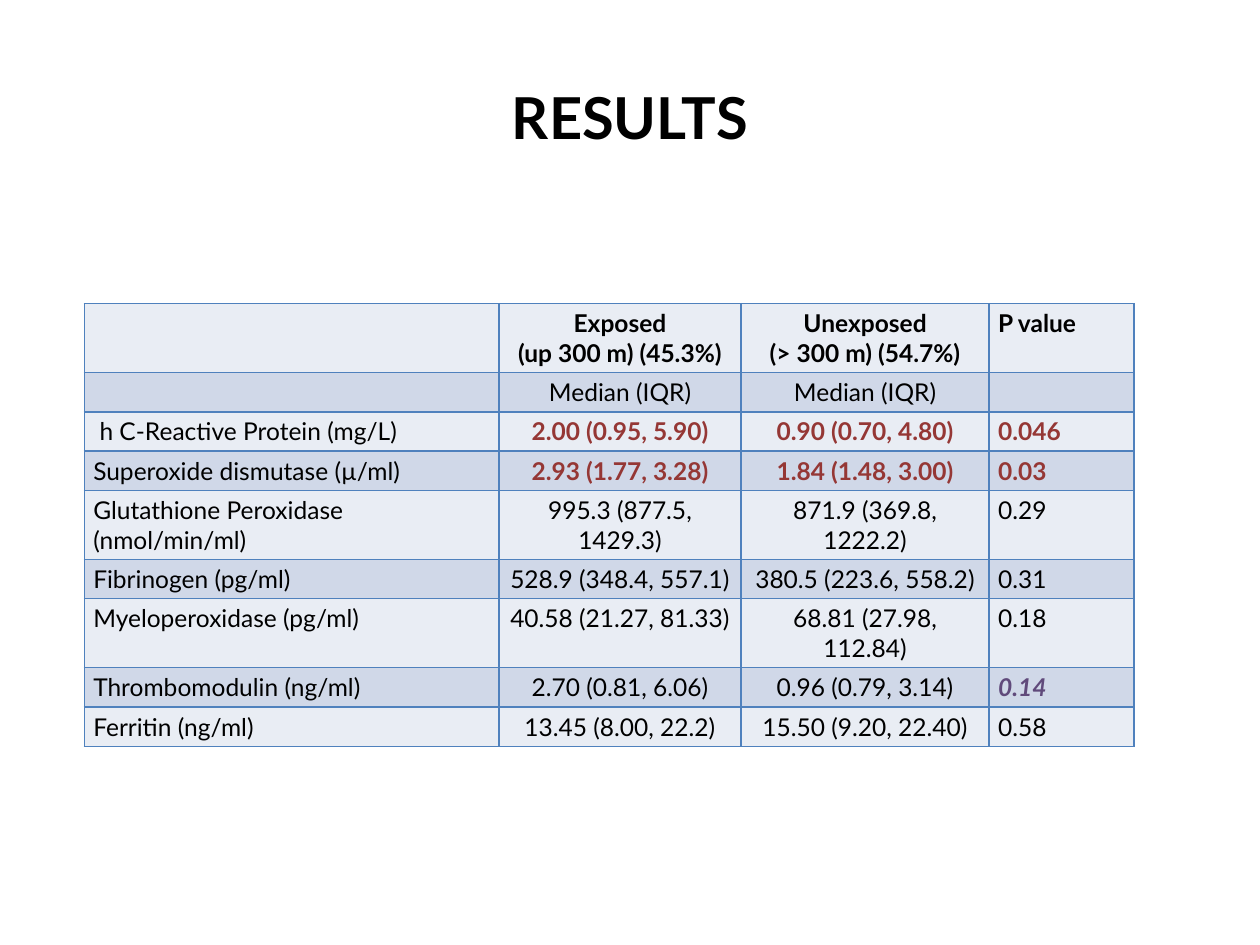
import lxml.etree
import pptx
import pptx.dml.color
import pptx.enum.text
import pptx.oxml.ns
import pptx.util
from dataclasses import dataclass

Cm, Pt = pptx.util.Cm, pptx.util.Pt
Align = pptx.enum.text.PP_ALIGN
Anchor = pptx.enum.text.MSO_ANCHOR
qn = pptx.oxml.ns.qn


@dataclass(frozen=True)
class Theme:
    font: str = "Lato"
    ink: str = "000000"
    red: str = "953735"
    plum: str = "604A7B"
    edge: str = "4F81BD"
    bands: tuple = ("E9EDF4", "D0D8E8")
    head: int = 33
    body: int = 14
    rule: int = 1


def rgb(code):
    return pptx.dml.color.RGBColor.from_string(code)


class Deck:
    def __init__(self, theme):
        self.theme = theme
        self.show = pptx.Presentation()
        self.show.slide_width, self.show.slide_height = Cm(25.4), Cm(19.05)
        self.slide = self.show.slides.add_slide(self.show.slide_layouts[6])

    def label(self, frame, text, size, align, color, bold=False, italic=False):
        frame.text = text
        for para in frame.paragraphs:
            para.alignment = align
            for run in para.runs:
                font = run.font
                font.name, font.size = self.theme.font, Pt(size)
                font.bold, font.italic = bold, italic
                font.color.rgb = rgb(color)
            if not para.runs:  # keeps the row of an empty cell low
                end = lxml.etree.SubElement(para._p, qn("a:endParaRPr"))
                end.set("sz", str(size * 100))

    def title(self, text, left, top, width, height):
        box = self.slide.shapes.add_textbox(Cm(left), Cm(top), Cm(width), Cm(height))
        frame = box.text_frame
        frame.word_wrap = True
        frame.vertical_anchor = Anchor.MIDDLE
        self.label(frame, text, self.theme.head, Align.CENTER, self.theme.ink, True)

    def border(self, cell):
        props = cell._tc.get_or_add_tcPr()
        for side in ("a:lnL", "a:lnR", "a:lnT", "a:lnB"):
            line = lxml.etree.SubElement(props, qn(side))
            line.set("w", str(Pt(self.theme.rule)))
            fill = lxml.etree.SubElement(line, qn("a:solidFill"))
            lxml.etree.SubElement(fill, qn("a:srgbClr")).set("val", self.theme.edge)

    def table(self, rows, looks, left, top, widths, heights):
        grid = self.slide.shapes.add_table(
            len(rows), len(widths), Cm(left), Cm(top),
            Cm(sum(widths)), Cm(sum(heights))).table
        grid.first_row = grid.horz_banding = False
        for col, width in zip(grid.columns, widths):
            col.width = Cm(width)
        for r, texts in enumerate(rows):
            grid.rows[r].height = Cm(heights[r])
            for c, text in enumerate(texts):
                cell = grid.cell(r, c)
                cell.margin_left = cell.margin_right = Cm(0.18)
                cell.margin_top = cell.margin_bottom = Cm(0.1)
                self.border(cell)
                cell.fill.solid()
                cell.fill.fore_color.rgb = rgb(self.theme.bands[r % 2])
                align = Align.CENTER if c in (1, 2) else Align.LEFT
                look = looks.get((r, c), (self.theme.ink,))
                self.label(cell.text_frame, text, self.theme.body, align, *look)


def main():
    theme = Theme()
    deck = Deck(theme)

    # Heading
    deck.title("RESULTS", 1.27, 0.76, 22.86, 3.18)

    # Biomarkers by exposure
    rows = [
        ("", "Exposed\n(up 300 m) (45.3%)", "Unexposed\n(> 300 m) (54.7%)", "P value"),
        ("", "Median (IQR)", "Median (IQR)", ""),
        (" h C-Reactive Protein (mg/L)", "2.00 (0.95, 5.90)", "0.90 (0.70, 4.80)", "0.046"),
        ("Superoxide dismutase (µ/ml)", "2.93 (1.77, 3.28)", "1.84 (1.48, 3.00)", "0.03"),
        ("Glutathione Peroxidase (nmol/min/ml)", "995.3 (877.5, 1429.3)",
         "871.9 (369.8, 1222.2)", "0.29"),
        ("Fibrinogen (pg/ml)", "528.9 (348.4, 557.1)", "380.5 (223.6, 558.2)", "0.31"),
        ("Myeloperoxidase (pg/ml)", "40.58 (21.27, 81.33)", "68.81 (27.98, 112.84)", "0.18"),
        ("Thrombomodulin (ng/ml)", "2.70 (0.81, 6.06)", "0.96 (0.79, 3.14)", "0.14"),
        ("Ferritin (ng/ml)", "13.45 (8.00, 22.2)", "15.50 (9.20, 22.40)", "0.58"),
    ]

    # Bold header, red significant results, plum borderline value
    looks = {(0, c): (theme.ink, True) for c in range(4)}
    looks |= {(r, c): (theme.red, True) for r in (2, 3) for c in (1, 2, 3)}
    looks[7, 3] = (theme.plum, True, True)

    deck.table(rows, looks, 1.7, 6.12, (8.36, 4.88, 5, 2.92), [1.35] + [0.77] * 8)
    deck.show.save("out.pptx")


if __name__ == "__main__":
    main()
